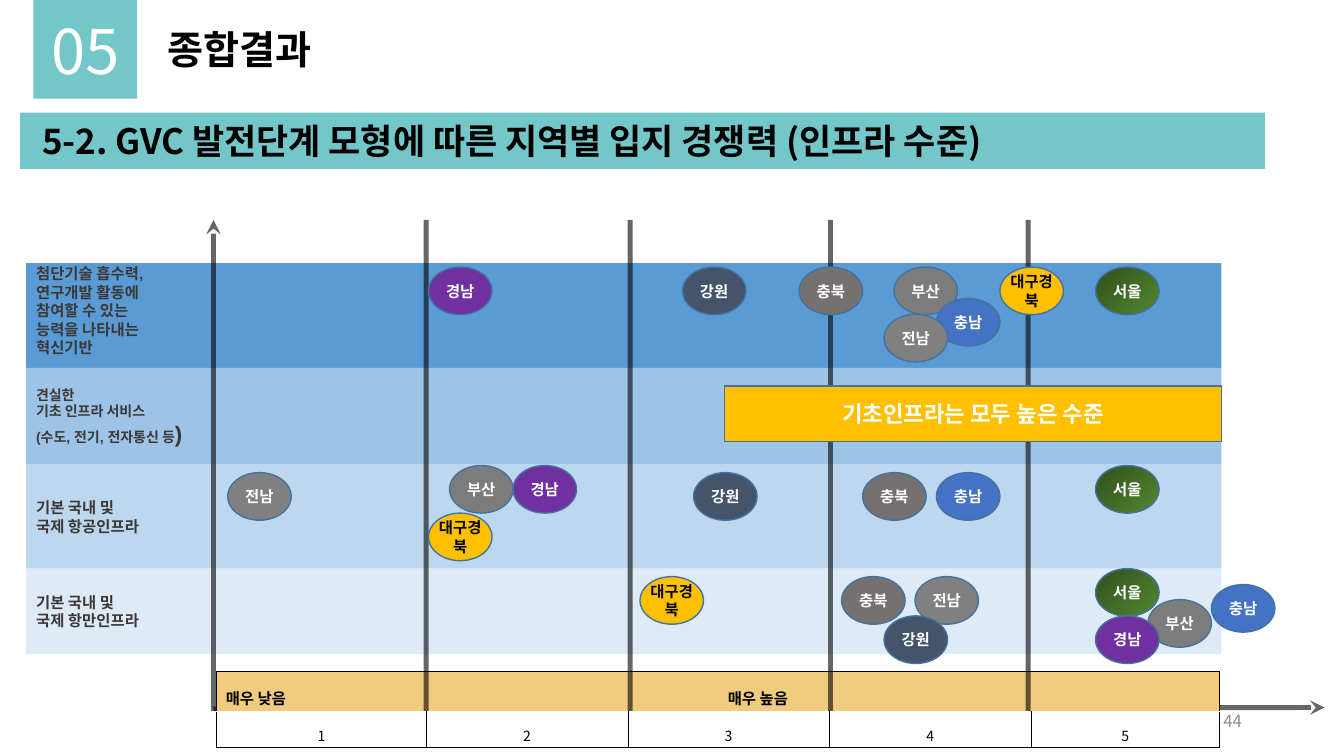
from dataclasses import dataclass

from lxml.etree import SubElement
from pptx import Presentation
from pptx.dml.color import RGBColor
from pptx.enum.shapes import MSO_CONNECTOR as Connector, MSO_SHAPE as Preset
from pptx.enum.text import MSO_ANCHOR as Anchor, MSO_AUTO_SIZE as AutoSize, PP_ALIGN as Align
from pptx.oxml.ns import qn
from pptx.util import Cm, Pt


@dataclass(frozen=True)
class Theme:
    font: str = "Noto Sans CJK KR"
    label_font: str = "Arial"
    teal: str = "74C7C9"
    white: str = "FFFFFF"
    black: str = "000000"
    label: str = "3B3838"
    outline: str = "43739E"
    gold: str = "FFC000"
    scale: str = "F1CB7E"
    page: str = "8C8C8C"
    number_size: float = 44
    title_size: float = 28
    subtitle_size: float = 25
    large_size: float = 16
    page_size: float = 12
    body_size: float = 11
    small_size: float = 10


THEME = Theme()


@dataclass(frozen=True)
class Run:
    text: str
    size: float
    color: str = THEME.black
    bold: bool = True
    font: str = THEME.font


@dataclass(frozen=True)
class Band:
    height: float
    fill: str
    lines: tuple[str, ...] = ()
    size: float = THEME.body_size
    ending: str = ""


@dataclass(frozen=True)
class Region:
    name: str
    colors: tuple[str, ...]
    places: tuple[tuple[float, float], ...]
    text_color: str = THEME.white


BAND_LEFT, BAND_TOP, BAND_WIDTH = 0.66, 6.63, 30.12
BANDS = (
    Band(2.64, "5B9BD5"),
    Band(2.44, "9DC3E6", ("견실한", "기초 인프라 서비스", "(수도, 전기, 전자통신 등"), THEME.small_size, ")"),
    Band(2.62, "BDD7EE", ("기본 국내 및", "국제 항공인프라")),
    Band(2.15, "DEEBF7", ("기본 국내 및", "국제 항만인프라")),
)
INNOVATION_LINES = ("첨단기술 흡수력,", "연구개발 활동에", "참여할 수 있는", "능력을 나타내는", "혁신기반")

# Marker places are left and top in centimetres
REGIONS = (
    Region("서울", ("31501C", "538730"), ((27.61, 11.73), (27.61, 14.33), (27.61, 6.73))),
    Region("부산", ("7C7C7C",), ((28.93, 15.11), (11.33, 11.73), (22.53, 6.73))),
    Region("경남", ("7030A0",), ((27.61, 15.52), (12.93, 11.73), (10.8, 6.73))),
    Region("대구경북", (THEME.gold,), ((10.8, 12.93), (16.13, 14.53), (25.2, 6.73)), THEME.black),
    Region("충남", ("4472C4",), ((30.53, 14.73), (23.6, 11.91), (23.6, 7.52))),
    Region("충북", ("767171",), ((21.21, 14.53), (21.74, 11.91), (20.14, 6.73))),
    Region("전남", ("808080",), ((23.06, 14.53), (5.74, 11.91), (22.28, 7.92))),
    Region("강원", ("44546A",), ((17.48, 11.91), (22.28, 15.52), (17.2, 6.73))),
)
AXIS_X, AXIS_TOP, AXIS_BOTTOM = 5.38, 5.54, 17.91
DIVIDERS = (10.74, 15.88, 20.93, 25.91)


def rgb(color: str) -> RGBColor:
    return RGBColor.from_string(color)


def add_run(paragraph, run: Run) -> None:
    item = paragraph.add_run()
    item.text = run.text
    font = item.font
    font.name, font.size, font.bold = run.font, Pt(run.size), run.bold
    font.color.rgb = rgb(run.color)
    latin = item._r.rPr.find(qn("a:latin"))
    east_asian = latin.makeelement(qn("a:ea"), {"typeface": THEME.font})
    latin.addnext(east_asian)


def write(frame, lines: list[list[Run]], align=Align.LEFT, anchor=Anchor.MIDDLE,
          insets: tuple[float, float] = (0.25, 0.13), wrap: bool = True) -> None:
    frame.auto_size, frame.word_wrap, frame.vertical_anchor = AutoSize.NONE, wrap, anchor
    frame.margin_left = frame.margin_right = Cm(insets[0])
    frame.margin_top = frame.margin_bottom = Cm(insets[1])
    for index, runs in enumerate(lines):
        paragraph = frame.add_paragraph() if index else frame.paragraphs[0]
        paragraph.alignment = align
        for run in runs:
            add_run(paragraph, run)


def add_box(slide, preset, box: tuple[float, ...], colors: tuple[str, ...], outline: str = ""):
    shape = slide.shapes.add_shape(preset, *map(Cm, box))
    shape.shadow.inherit = False
    if len(colors) > 1:
        shape.fill.gradient()
        shape.fill.gradient_angle = 315
        for stop, color in zip(shape.fill.gradient_stops, colors):
            stop.color.rgb = rgb(color)
    else:
        shape.fill.solid()
        shape.fill.fore_color.rgb = rgb(colors[0])
    if outline:
        shape.line.color.rgb, shape.line.width = rgb(outline), Pt(1)
    else:
        shape.line.fill.background()
    return shape


def add_axis(slide, start: tuple[float, float], end: tuple[float, float], arrow: bool = False) -> None:
    connector = slide.shapes.add_connector(Connector.STRAIGHT, *map(Cm, start + end))
    connector.line.width = Pt(3.5)
    connector.line.color.rgb = rgb(THEME.black)
    line = connector.line._get_or_add_ln()
    SubElement(line.find(qn("a:solidFill"))[0], qn("a:alpha"), val="60000")
    if arrow:
        SubElement(line, qn("a:headEnd"), type="stealth")
    SubElement(connector._element.spPr, qn("a:effectLst"))


def format_cell(cell, sides: str, fill: str = "") -> None:
    properties = cell._tc.get_or_add_tcPr()
    for side in sides:
        border = SubElement(properties, qn(f"a:ln{side}"), w="3600")
        SubElement(SubElement(border, qn("a:solidFill")), qn("a:srgbClr"), val=THEME.black)
    if fill:
        cell.fill.solid()
        cell.fill.fore_color.rgb = rgb(fill)
    else:
        cell.fill.background()
    cell.vertical_anchor = Anchor.MIDDLE
    cell.margin_left = cell.margin_right = Cm(0.23)
    cell.margin_top = cell.margin_bottom = Cm(0.05)
    cell.text_frame.paragraphs[0].line_spacing = 1.6


def add_scale(slide) -> None:
    widths = (5.28, 5.08, 5.08, 5.08, 4.75)
    table = slide.shapes.add_table(2, 5, Cm(5.46), Cm(16.92), Cm(sum(widths)), Cm(1.4)).table
    table.first_row = table.horz_banding = False
    table.rows[0].height, table.rows[1].height = Cm(0.66), Cm(0.74)
    for column, width in enumerate(widths):
        table.columns[column].width = Cm(width)
        format_cell(table.cell(0, column), "LRT", THEME.scale)
        score = table.cell(1, column)
        format_cell(score, "LRB")
        paragraph = score.text_frame.paragraphs[0]
        paragraph.alignment = Align.CENTER
        add_run(paragraph, Run(str(column + 1), THEME.small_size, bold=False))
    heading = table.cell(0, 0)
    heading.merge(table.cell(0, 4))
    paragraph = heading.text_frame.paragraphs[0]
    tabs = SubElement(paragraph._p.get_or_add_pPr(), qn("a:tabLst"))
    SubElement(tabs, qn("a:tab"), pos=str(Cm(12.65)), algn="l")
    add_run(paragraph, Run("매우 낮음\t매우 높음", THEME.body_size))


def label_run(text: str, size: float) -> Run:
    return Run(text, size, THEME.label, font=THEME.label_font)


def main() -> None:
    presentation = Presentation()
    presentation.slide_width, presentation.slide_height = Cm(33.87), Cm(19.05)
    slide = presentation.slides.add_slide(presentation.slide_layouts[5])

    # Header
    title = slide.shapes.title
    title.left, title.top, title.width, title.height = map(Cm, (3.96, 0.51, 4.42, 1.45))
    write(title.text_frame, [[Run("종합결과", THEME.title_size)]], wrap=False)
    number = add_box(slide, Preset.RECTANGLE, (0.84, 0, 2.62, 2.49), (THEME.teal,))
    write(number.text_frame, [[Run("05", THEME.number_size, THEME.white, False)]],
          Align.CENTER, insets=(0, 0), wrap=False)
    subtitle = add_box(slide, Preset.RECTANGLE, (0.51, 2.84, 31.37, 1.42), (THEME.teal,))
    write(subtitle.text_frame, [[Run("5-2. GVC 발전단계 모형에 따른 지역별 입지 경쟁력 (인프라 수준)",
                                     THEME.subtitle_size)]], insets=(0.56, 0))

    # Horizontal axis and page number
    add_axis(slide, (33.38, 17.83), (AXIS_X, 17.86), arrow=True)
    page = slide.shapes.add_textbox(*map(Cm, (23.93, 17.65, 7.62, 1.02)))
    write(page.text_frame, [[Run("44", THEME.page_size, THEME.page, False)]], Align.RIGHT)

    # Infrastructure bands
    top = BAND_TOP
    for band in BANDS:
        shape = add_box(slide, Preset.RECTANGLE, (BAND_LEFT, top, BAND_WIDTH, band.height), (band.fill,))
        lines = [[label_run(line, band.size)] for line in band.lines]
        if band.ending:
            lines[-1].append(label_run(band.ending, THEME.large_size))
        write(shape.text_frame, lines)
        top += band.height
    innovation = slide.shapes.add_textbox(*map(Cm, (BAND_LEFT, 6.53, 5.05, 3.07)))
    write(innovation.text_frame, [[label_run(line, THEME.body_size)] for line in INNOVATION_LINES],
          anchor=Anchor.TOP)

    # Score scale and vertical lines
    add_scale(slide)
    for x in (AXIS_X, *DIVIDERS):
        add_axis(slide, (x, AXIS_TOP), (x, AXIS_BOTTOM), arrow=x == AXIS_X)

    # Regions and the shared result
    banner = add_box(slide, Preset.RECTANGLE, (18.26, 9.73, 12.52, 1.4), (THEME.gold,), THEME.outline)
    write(banner.text_frame, [[Run("기초인프라는 모두 높은 수준", THEME.large_size, THEME.white)]], Align.CENTER)
    for region in REGIONS:
        for left, top in region.places:
            marker = add_box(slide, Preset.OVAL, (left, top, 1.6, 1.2), region.colors, THEME.outline)
            write(marker.text_frame, [[Run(region.name, THEME.body_size, region.text_color)]],
                  Align.CENTER, insets=(0, 0))

    presentation.save("out.pptx")


if __name__ == "__main__":
    main()
